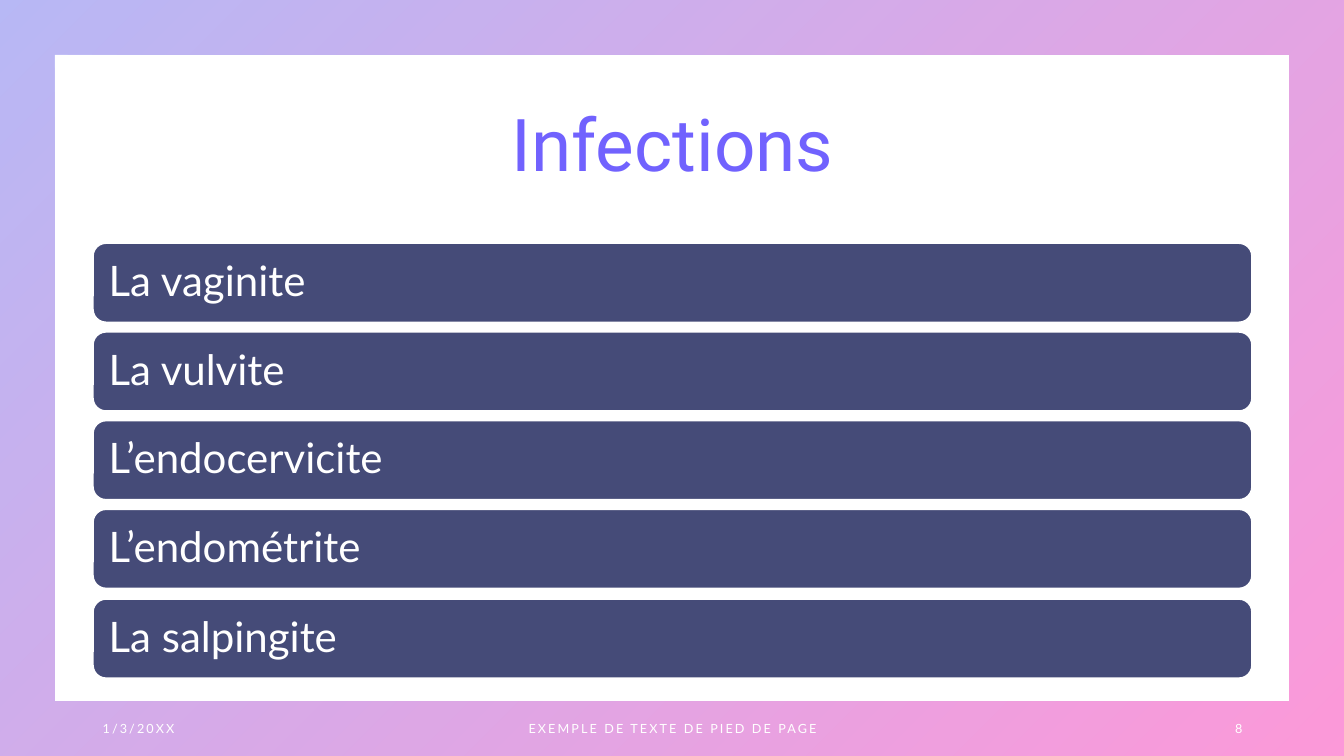
from dataclasses import dataclass

from lxml.etree import SubElement as Sub
from pptx import Presentation
from pptx.dml.color import RGBColor as Rgb
from pptx.enum.shapes import MSO_SHAPE as Kind
from pptx.enum.text import MSO_ANCHOR as Anchor, PP_ALIGN as Align
from pptx.oxml.ns import qn
from pptx.util import Pt

PX = 9144  # 100 px to the inch
WIDE, HIGH = 1333, 750
LEFT, SPAN = 92, 1150
RIGHT = LEFT + SPAN

# Bars: top of the first and of the last, height, text inset
FIRST, LAST, TALL, INSET = 241, 594, 79, 12

ITEMS = ("La vaginite", "La vulvite", "L’endocervicite", "L’endométrite", "La salpingite")

# Footer parts: text, left, width, alignment
FOOTER = (
    ("1/3/20XX", LEFT, 300, Align.LEFT),
    ("EXEMPLE DE TEXTE DE PIED DE PAGE", 442, 450, Align.CENTER),
    ("8", RIGHT - 300, 300, Align.RIGHT),
)


@dataclass(frozen=True)
class Theme:
    white: Rgb = Rgb.from_string("FFFFFF")
    bar: Rgb = Rgb.from_string("454B78")
    # Gradient stops: colour, opacity in percent
    frame: tuple = (("4D4EE6", 40), ("F900A0", 40))
    title: tuple = (("7162FE", 100), ("F900A0", 70))
    head: str = "Roboto"
    body: str = "Lato"
    big: int = 52
    mid: int = 30
    small: int = 9


THEME = Theme()


def px(*nums):
    return [n * PX for n in nums]


def blend(fill, root, stops, angle):
    """Fill with a gradient; root is the element that holds its colours."""
    fill.gradient()
    fill.gradient_angle = angle
    for stop, (color, _) in zip(fill.gradient_stops, stops):
        stop.color.rgb = Rgb.from_string(color)
    for node, (_, alpha) in zip(root.iter(qn("a:srgbClr")), stops):
        Sub(node, qn("a:alpha"), val=str(alpha * 1000))


def track(box, points):
    """Set the letter spacing of every run in a box."""
    for node in box.element.iter(qn("a:rPr")):
        node.set("spc", str(int(points * 100)))


def write(shape, text, face, size, align=Align.LEFT, lines=1.0, after=0):
    """Add one white, vertically centred run and return it."""
    frame = shape.text_frame
    frame.word_wrap = True
    frame.vertical_anchor = Anchor.MIDDLE
    para = frame.paragraphs[0]
    para.alignment = align
    para.line_spacing = lines
    para.space_after = Pt(after)
    run = para.add_run()
    run.text = text
    run.font.name = face
    run.font.size = Pt(size)
    run.font.color.rgb = THEME.white
    return run


def border(slide):
    shape = slide.shapes.add_shape(Kind.FRAME, *px(0, 0, WIDE, HIGH))
    shape.shadow.inherit = False
    shape.adjustments[0] = 0.072
    shape.line.fill.background()
    blend(shape.fill, shape.element, THEME.frame, 315)


def title(slide, text):
    box = slide.shapes.add_textbox(*px(LEFT, 74, SPAN, 145))
    run = write(box, text, THEME.head, THEME.big, Align.CENTER, lines=0.9)
    blend(run.font.fill, box.element, THEME.title, 0)


def footer(slide, text, left, width, align):
    box = slide.shapes.add_textbox(*px(left, 703, width, 40))
    write(box, text, THEME.body, THEME.small, align, after=6)
    track(box, 1.5)


def bar(slide, text, top):
    shape = slide.shapes.add_shape(Kind.ROUNDED_RECTANGLE, *px(LEFT, top, SPAN, TALL))
    shape.shadow.inherit = False
    shape.fill.solid()
    shape.fill.fore_color.rgb = THEME.bar
    shape.line.color.rgb = THEME.white
    shape.line.width = Pt(1.5)
    frame = shape.text_frame
    frame.margin_left, frame.margin_right = px(INSET, INSET)
    write(shape, text, THEME.body, THEME.mid, lines=0.9)


def main():
    deck = Presentation()
    deck.slide_width, deck.slide_height = px(WIDE, HIGH)
    slide = deck.slides.add_slide(deck.slide_layouts[6])

    # Border and title
    border(slide)
    title(slide, "Infections")

    # Footer line
    for part in FOOTER:
        footer(slide, *part)

    # Bars, spread evenly from the first top to the last
    for i, item in enumerate(ITEMS):
        bar(slide, item, FIRST + (LAST - FIRST) * i // (len(ITEMS) - 1))

    deck.save("out.pptx")


if __name__ == "__main__":
    main()
